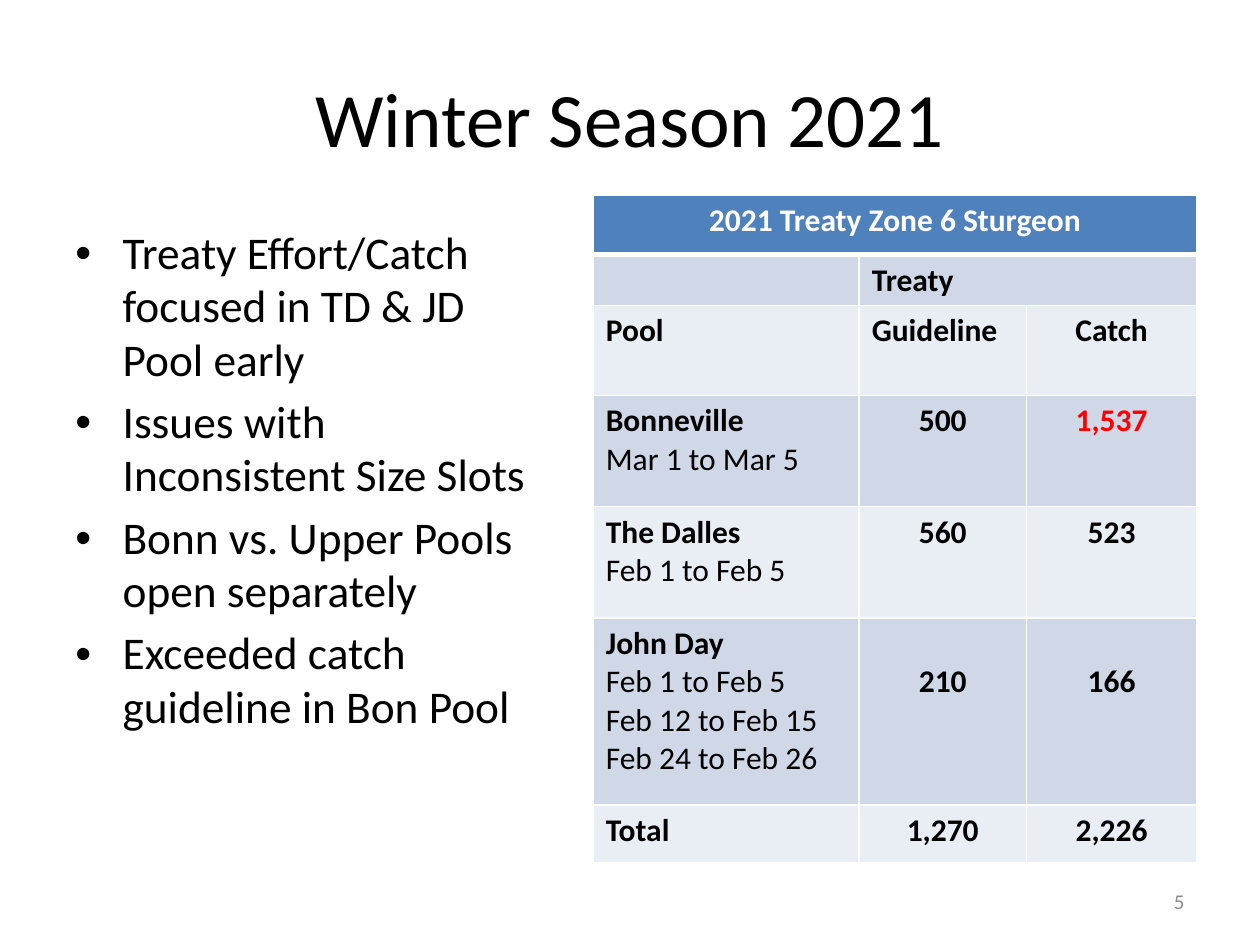
from lxml.etree import SubElement
from pptx import Presentation
from pptx.dml.color import RGBColor
from pptx.enum.text import MSO_ANCHOR, PP_ALIGN
from pptx.oxml.ns import qn
from pptx.util import Pt

FONT = "Calibri"
COLORS = {"black": "000000", "white": "FFFFFF", "red": "FF0000", "gray": "8C8C8C",
          "head": "4F81BD", "dark": "D0D8E8", "light": "E9EDF4"}
POINTS = ["Treaty Effort/Catch focused in TD & JD Pool early",
          "Issues with Inconsistent Size Slots",
          "Bonn vs. Upper Pools open separately",
          "Exceeded catch guideline in Bon Pool"]
COLS = [152, 95.5, 97.5]
ROWS = [34, 29, 51.5, 63.5, 63.5, 107, 33]
CELLS = [["2021 Treaty Zone 6 Sturgeon", "", ""],
         ["", "Treaty", ""],
         ["Pool", "Guideline", "Catch"],
         ["Bonneville\nMar 1 to Mar 5", "500", "1,537"],
         ["The Dalles\nFeb 1 to Feb 5", "560", "523"],
         ["John Day\nFeb 1 to Feb 5\nFeb 12 to Feb 15\nFeb 24 to Feb 26", "210", "166"],
         ["Total", "1,270", "2,226"]]
LEFT = {(1, 1), (2, 1)}
OVER = (3, 2)
LOWER = 5


def rgb(name):
    return RGBColor.from_string(COLORS[name])


def style(para, size, color="black", align=PP_ALIGN.LEFT, bold=False):
    para.alignment = align
    font = para.font
    font.name, font.size, font.bold = FONT, Pt(size), bold
    font.color.rgb = rgb(color)


def add_title(slide, box, text):
    title = slide.shapes.title
    title.left, title.top, title.width, title.height = map(Pt, box)
    frame = title.text_frame
    frame.text = text
    frame.vertical_anchor = MSO_ANCHOR.MIDDLE
    style(frame.paragraphs[0], 44, align=PP_ALIGN.CENTER)


def add_text(slide, box, text, anchor):
    frame = slide.shapes.add_textbox(*map(Pt, box)).text_frame
    frame.word_wrap = True
    frame.vertical_anchor = anchor
    frame.text = text
    return frame


def add_list(slide, box, items):
    frame = add_text(slide, box, "\n".join(items), MSO_ANCHOR.TOP)
    for para in frame.paragraphs:
        style(para, 25.9)
        para.line_spacing = 0.98
        para.space_before = Pt(5.2)
        props = para._p.get_or_add_pPr()
        props.set("marL", str(Pt(27)))
        props.set("indent", str(-Pt(27)))
        SubElement(props, qn("a:buFont"), typeface="Arial")
        SubElement(props, qn("a:buChar"), char="•")


def add_edges(cell, base):
    """Draw white cell borders, with the given width at the bottom."""
    props = cell._tc.get_or_add_tcPr()
    for side, width in zip("LRTB", (1, 1, 1, base)):
        line = SubElement(props, qn(f"a:ln{side}"), w=str(Pt(width)))
        fill = SubElement(line, qn("a:solidFill"))
        SubElement(fill, qn("a:srgbClr"), val=COLORS["white"])


def fill_cell(cell, row, col, text):
    head = row == 0
    add_edges(cell, 3 if head else 1)
    cell.fill.solid()
    cell.fill.fore_color.rgb = rgb("head" if head else "dark" if row % 2 else "light")
    cell.text = text
    left = (row, col) in LEFT or (col == 0 and not head)
    align = PP_ALIGN.LEFT if left else PP_ALIGN.CENTER
    color = "white" if head else "red" if (row, col) == OVER else "black"
    for num, para in enumerate(cell.text_frame.paragraphs):
        style(para, 18, color, align, bold=num == 0)
    if row == LOWER and col:
        cell.margin_top = Pt(25.6)


def add_grid(slide, box):
    table = slide.shapes.add_table(len(ROWS), len(COLS), *map(Pt, box)).table
    for col, width in zip(table.columns, COLS):
        col.width = Pt(width)
    for row, height in zip(table.rows, ROWS):
        row.height = Pt(height)
    for row, texts in enumerate(CELLS):
        for col, text in enumerate(texts):
            fill_cell(table.cell(row, col), row, col, text)
    table.cell(0, 0).merge(table.cell(0, 2))
    table.cell(1, 1).merge(table.cell(1, 2))


def add_number(slide, box, text):
    frame = add_text(slide, box, text, MSO_ANCHOR.MIDDLE)
    style(frame.paragraphs[0], 12, "gray", PP_ALIGN.RIGHT)


def main():
    deck = Presentation()
    deck.slide_width, deck.slide_height = Pt(720), Pt(540)
    slide = deck.slides.add_slide(deck.slide_layouts[5])
    add_title(slide, (36, 21.6, 648, 90), "Winter Season 2021")
    add_list(slide, (36, 126, 282, 356.4), POINTS)
    add_grid(slide, (339, 111.6, sum(COLS), sum(ROWS)))
    add_number(slide, (516, 500.5, 168, 28.8), "5")
    deck.save("out.pptx")


if __name__ == "__main__":
    main()
